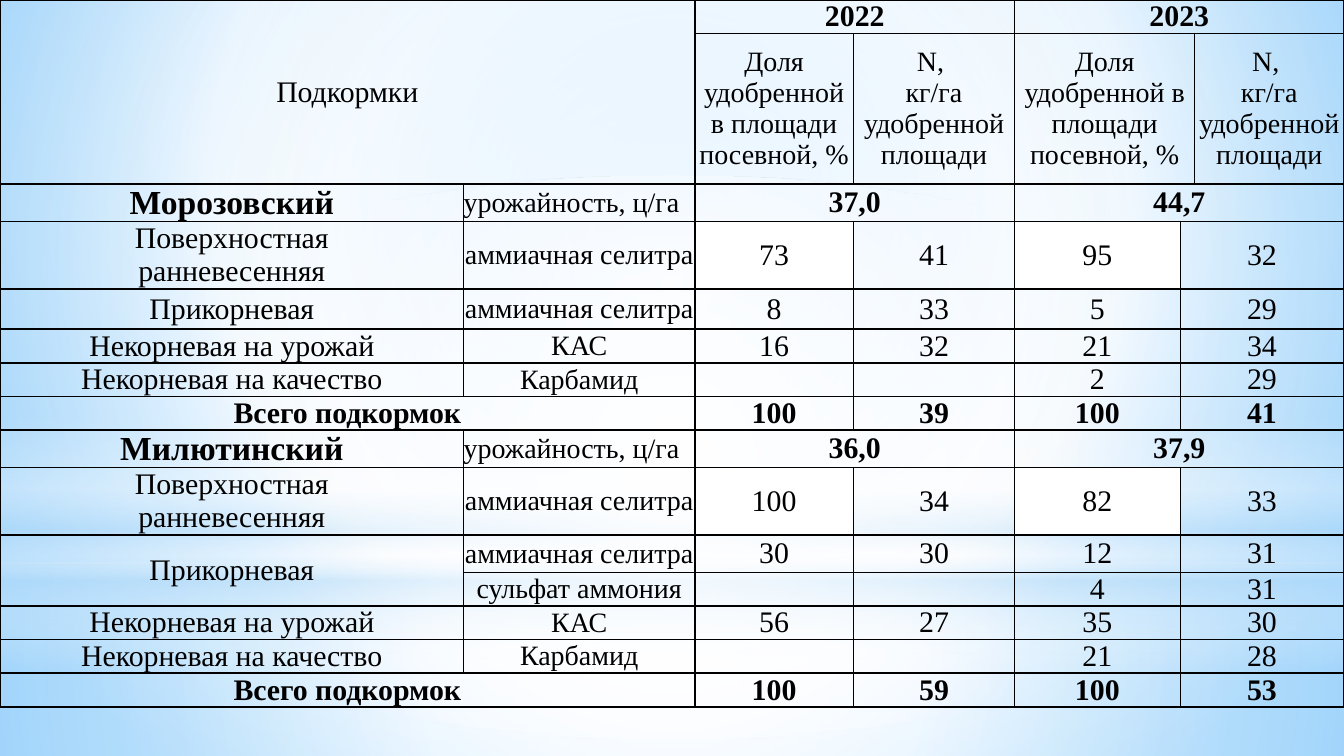
from dataclasses import dataclass
from itertools import product
from typing import Any, Iterator

from lxml.etree import SubElement
from pptx import Presentation
from pptx.dml.color import RGBColor
from pptx.enum.shapes import MSO_SHAPE
from pptx.enum.text import MSO_ANCHOR, PP_ALIGN
from pptx.oxml import parse_xml
from pptx.oxml.ns import nsdecls, qn
from pptx.util import Inches, Pt

FONT = "Times New Roman"
INK, WHITE, SKY = "000000", "FFFFFF", "B4DCFA"
PAGE_WIDTH = 10
PAGE_HEIGHT = PAGE_WIDTH * 9 / 16
COLUMN_WIDTHS = [3.45, 1.72, 1.18, 1.2, 1.23, 0.11, 1.11]
ROW_HEIGHTS = [0.25, 1.12, 0.28, 0.5, 0.3, *[0.25] * 3, 0.28, 0.5, 0.28, *[0.25] * 4]
SHARE_COLUMNS, DOSE_COLUMNS = (2, 4), (3, 5, 6)
SPLIT_ROW = 10


@dataclass
class Gradient:
    """Stops of position, colour and opacity, with a focus or a straight run."""
    stops: list[tuple[int, str, int]]
    focus: tuple[int, int, int, int] | None = None


@dataclass
class Glow:
    """A soft backdrop band across the whole page."""
    preset: MSO_SHAPE
    top: float
    height: float
    gradient: Gradient


@dataclass
class Entry:
    """One table cell, possibly spanning several rows or columns."""
    row: int
    column: int
    text: str
    size: int = 16
    bold: bool = False
    columns: int = 1
    rows: int = 1
    align: PP_ALIGN = PP_ALIGN.CENTER
    white: bool = False


@dataclass
class District:
    """A district with its yields and its feedings."""
    row: int
    name: str
    yields: tuple[str, str]
    feedings: list[tuple[str, str, str]]
    totals: str


CENTRE = (50, 50, 50, 50)
BACKGROUND = Gradient([(0, "9ED5FF", 100), (60, WHITE, 100), (100, "5BB9FF", 100)], (20, 10, 20, 60))
GLOWS = [
    Glow(MSO_SHAPE.RECTANGLE, 4.19, 1.44, Gradient([(0, WHITE, 91), (37, WHITE, 76), (100, SKY, 79)], CENTRE)),
    Glow(MSO_SHAPE.RECTANGLE, 0, 4.19, Gradient([(0, WHITE, 89), (48, WHITE, 62), (100, SKY, 79)], CENTRE)),
    Glow(MSO_SHAPE.RECTANGLE, 3.09, 1.88, Gradient([
        (0, WHITE, 0), (29, WHITE, 30), (45, SKY, 40), (55, WHITE, 26), (65, SKY, 60), (100, WHITE, 0)])),
    Glow(MSO_SHAPE.OVAL, 1.31, 4.19, Gradient([(0, WHITE, 100), (56, WHITE, 0)], CENTRE)),
]
EARLY, ROOT = "Поверхностная\nранневесенняя", "Прикорневая"
YIELD_LEAF, QUALITY_LEAF = "Некорневая на урожай", "Некорневая на качество"
NITRATE, SULPHATE, SOLUTION, UREA = "аммиачная селитра", "сульфат аммония", "КАС", "Карбамид"
DISTRICTS = [
    District(2, "Морозовский", ("37,0", "44,7"), [
        (EARLY, NITRATE, "73|41|95|32"),
        (ROOT, NITRATE, "8|33|5|29"),
        (YIELD_LEAF, SOLUTION, "16|32|21|34"),
        (QUALITY_LEAF, UREA, "||2|29"),
    ], "100|39|100|41"),
    District(8, "Милютинский", ("36,0", "37,9"), [
        (EARLY, NITRATE, "100|34|82|33"),
        (ROOT, NITRATE, "30|30|12|31"),
        ("", SULPHATE, "||4|31"),
        (YIELD_LEAF, SOLUTION, "56|27|35|30"),
        (QUALITY_LEAF, UREA, "||21|28"),
    ], "100|59|100|53"),
]


def colour(code: str) -> RGBColor:
    """Turn a hex string into a colour."""
    return RGBColor.from_string(code)


def apply_gradient(fill: Any, element: Any, gradient: Gradient) -> None:
    """Give the page or shape behind the element a gradient fill."""
    stops = "".join(
        f'<a:gs pos="{place * 1000}"><a:srgbClr val="{code}"><a:alpha val="{opacity * 1000}"/></a:srgbClr></a:gs>'
        for place, code, opacity in gradient.stops)
    course = '<a:lin ang="5400000" scaled="0"/>'
    if gradient.focus:
        sides = " ".join(f'{side}="{value * 1000}"' for side, value in zip("ltrb", gradient.focus))
        course = f'<a:path path="circle"><a:fillToRect {sides}/></a:path>'
    fill.background()
    blank = next(element.iter(qn("a:noFill")))
    blank.getparent().replace(blank, parse_xml(
        f'<a:gradFill {nsdecls("a")} rotWithShape="1"><a:gsLst>{stops}</a:gsLst>{course}</a:gradFill>'))


def draw_glow(page: Any, glow: Glow) -> None:
    """Draw one backdrop band."""
    shape = page.shapes.add_shape(glow.preset, 0, Inches(glow.top), Inches(PAGE_WIDTH), Inches(glow.height))
    shape.shadow.inherit = False
    apply_gradient(shape.fill, shape._element, glow.gradient)
    shape.line.fill.background()


def value_entries(row: int, values: str, bold: bool = False, white: bool = False) -> Iterator[Entry]:
    """Spread the four figures of a row over the share and dose columns."""
    for column, text in enumerate(values.split("|"), 2):
        yield Entry(row, column, text, bold=bold, columns=2 if column == 5 else 1,
                    white=white and column in SHARE_COLUMNS)


def header_entries() -> Iterator[Entry]:
    """List the cells of the two heading rows."""
    yield Entry(0, 0, "Подкормки", columns=2, rows=2)
    for year, column, width in (("2022", 2, 2), ("2023", 4, 3)):
        yield Entry(0, column, year, bold=True, columns=width)
        yield Entry(1, column, "Доля удобренной в площади посевной, %", 15, columns=width - 1)
        yield Entry(1, column + width - 1, "N, \nкг/га удобренной площади", 15)


def district_entries(district: District) -> Iterator[Entry]:
    """List the cells of one district block."""
    yield Entry(district.row, 0, district.name, 18, True)
    yield Entry(district.row, 1, "урожайность, ц/га", 15, align=PP_ALIGN.LEFT)
    for text, column, width in zip(district.yields, SHARE_COLUMNS, (2, 3)):
        yield Entry(district.row, column, text, bold=True, columns=width)
    names = [name for name, _, _ in district.feedings] + ["Всего"]
    for index, (name, fertiliser, values) in enumerate(district.feedings):
        row = district.row + 1 + index
        if name:
            yield Entry(row, 0, name, rows=1 if names[index + 1] else 2)
        yield Entry(row, 1, fertiliser, 15)
        yield from value_entries(row, values, white=name == EARLY)
    last = district.row + 1 + len(district.feedings)
    yield Entry(last, 0, "Всего подкормок", bold=True, columns=2)
    yield from value_entries(last, district.totals, bold=True)


def set_borders(cell: Any, entry: Entry) -> None:
    """Rule a cell, thinly inside a year and inside the split feeding."""
    single = entry.row > 0 and not (entry.column == 2 and entry.columns == 2 or entry.columns == 3)
    thin = {
        "L": single and entry.column in DOSE_COLUMNS,
        "R": single and entry.column in SHARE_COLUMNS,
        "T": entry.column > 0 and entry.row == SPLIT_ROW + 1,
        "B": entry.column > 0 and entry.row == SPLIT_ROW,
    }
    for side, is_thin in thin.items():
        line = SubElement(cell._tc.get_or_add_tcPr(), qn(f"a:ln{side}"), w=str(Pt(0.5 if is_thin else 1)))
        SubElement(SubElement(line, qn("a:solidFill")), qn("a:srgbClr"), val=INK)


def write_text(cell: Any, entry: Entry) -> None:
    """Write and format the text of a cell."""
    para = cell.text_frame.paragraphs[0]
    para.alignment = entry.align
    para.text = entry.text
    size = str(entry.size * 100)
    for span in para.runs:
        for name, value in {"name": FONT, "size": Pt(entry.size), "bold": entry.bold}.items():
            setattr(span.font, name, value)
        span.font.color.rgb = colour(INK)
    for line_break in para._p.findall(qn("a:br")):
        SubElement(line_break, qn("a:rPr"), sz=size)
    ending = SubElement(para._p, qn("a:endParaRPr"), sz=size)
    SubElement(ending, qn("a:latin"), typeface=FONT)


def fill_entry(table: Any, entry: Entry) -> None:
    """Format every grid cell of an entry, then merge them."""
    bottom, right = entry.row + entry.rows - 1, entry.column + entry.columns - 1
    origin = table.cell(entry.row, entry.column)
    for row, column in product(range(entry.row, bottom + 1), range(entry.column, right + 1)):
        cell = table.cell(row, column)
        layout = dict.fromkeys(["margin_left", "margin_right", "margin_top", "margin_bottom"], 0)
        for name, value in {**layout, "vertical_anchor": MSO_ANCHOR.MIDDLE}.items():
            setattr(cell, name, value)
        set_borders(cell, entry)
        if entry.white:
            cell.fill.solid()
            cell.fill.fore_color.rgb = colour(WHITE)
        else:
            cell.fill.background()
    if entry.rows * entry.columns > 1:
        origin.merge(table.cell(bottom, right))
    write_text(origin, entry)


def draw_table(page: Any) -> None:
    """Draw the table of feedings."""
    frame = page.shapes.add_table(len(ROW_HEIGHTS), len(COLUMN_WIDTHS), 0, 0, Inches(PAGE_WIDTH), Inches(5.55))
    table = frame.table
    table.first_row = table.horz_banding = False
    for column, width in zip(table.columns, COLUMN_WIDTHS):
        column.width = Inches(width)
    for row, height in zip(table.rows, ROW_HEIGHTS):
        row.height = Inches(height)
    frame.height = Inches(5.55)
    for entry in header_entries():
        fill_entry(table, entry)
    for district in DISTRICTS:
        for entry in district_entries(district):
            fill_entry(table, entry)


def main() -> None:
    """Build the deck and save it."""
    deck = Presentation()
    deck.slide_width, deck.slide_height = Inches(PAGE_WIDTH), Inches(PAGE_HEIGHT)
    page = deck.slides.add_slide(deck.slide_layouts[6])
    apply_gradient(page.background.fill, page._element, BACKGROUND)
    for glow in GLOWS:
        draw_glow(page, glow)
    draw_table(page)
    deck.save("out.pptx")


if __name__ == "__main__":
    main()
